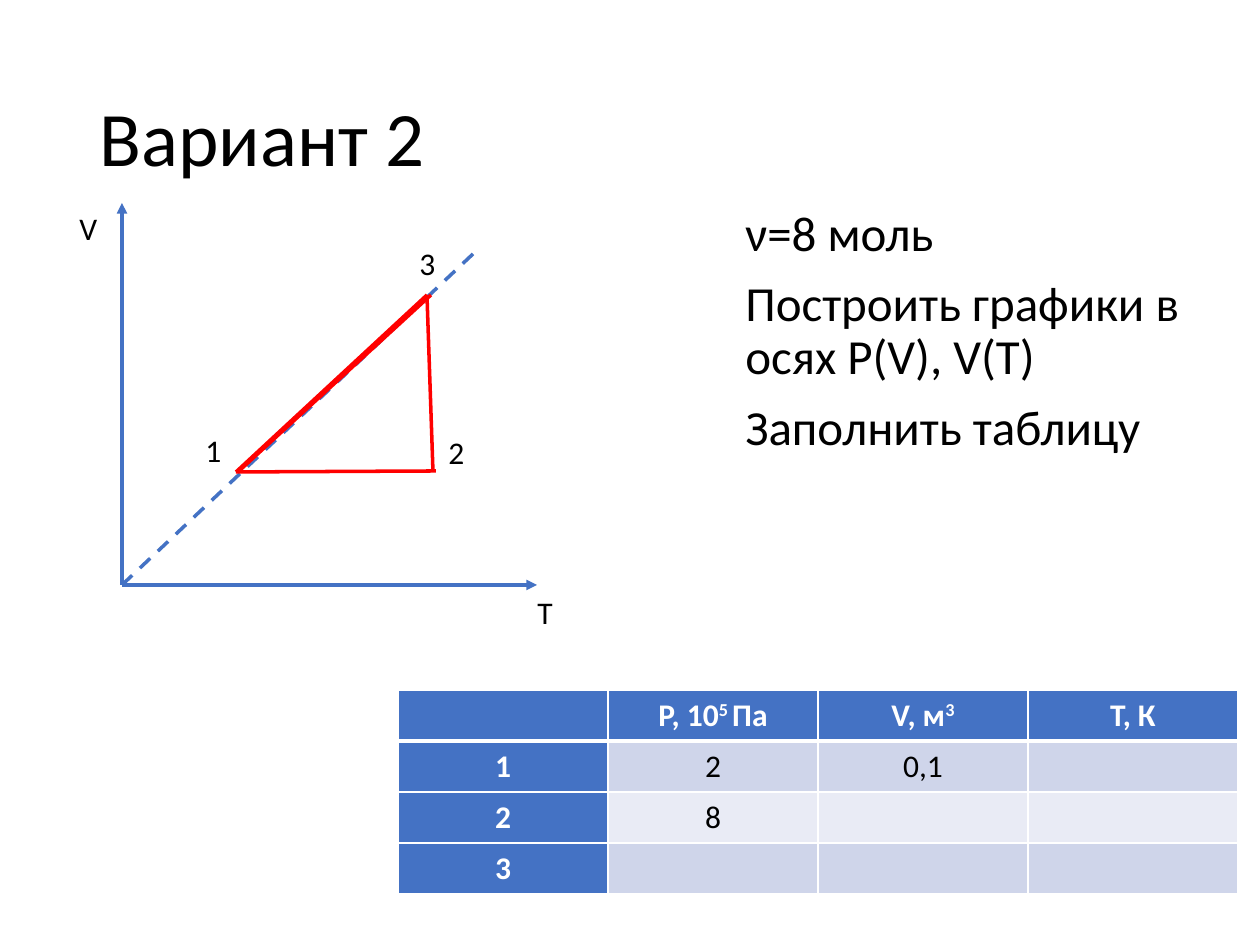
from dataclasses import dataclass

from lxml.etree import SubElement
from pptx import Presentation
from pptx.dml.color import RGBColor
from pptx.enum.dml import MSO_LINE
from pptx.enum.shapes import MSO_CONNECTOR
from pptx.enum.text import MSO_ANCHOR, MSO_AUTO_SIZE, PP_ALIGN
from pptx.oxml.ns import qn
from pptx.util import Pt

EMU_PER_PX = 914400 / 126


@dataclass(frozen=True)
class Theme:
    font: str = "Calibri"
    text: str = "000000"
    light: str = "FFFFFF"
    accent: str = "4472C4"
    process: str = "FF0000"
    bands: tuple = ("CFD5EA", "E9EBF5")
    title_size: int = 44
    body_size: int = 28
    label_size: int = 18
    line_width: int = 2


def px(length):
    return round(length * EMU_PER_PX)


def color(value):
    return RGBColor.from_string(value)


def write(paragraph, text, font, size, fill, bold=False, align=PP_ALIGN.LEFT):
    paragraph.alignment = align
    for index, part in enumerate(text.split("^")):
        run = paragraph.add_run()
        run.text = part
        run.font.name = font
        run.font.size = Pt(size)
        run.font.bold = bold
        run.font.color.rgb = color(fill)
        if index % 2:
            run.font._element.set("baseline", "30000")


class SlideBuilder:
    def __init__(self, slide, theme):
        self.slide = slide
        self.theme = theme

    def title(self, text, left, top, width, height):
        shape = self.slide.shapes.title
        shape.left, shape.top = px(left), px(top)
        shape.width, shape.height = px(width), px(height)
        frame = shape.text_frame
        frame.vertical_anchor = MSO_ANCHOR.MIDDLE
        paragraph = frame.paragraphs[0]
        paragraph.line_spacing = 0.9
        write(paragraph, text, self.theme.font, self.theme.title_size, self.theme.text)

    def body(self, lines, left, top, width, height):
        box = self.slide.shapes.add_textbox(px(left), px(top), px(width), px(height))
        frame = box.text_frame
        frame.word_wrap = True
        for index, line in enumerate(lines):
            paragraph = frame.add_paragraph() if index else frame.paragraphs[0]
            paragraph.line_spacing = 0.9
            paragraph.space_before = Pt(10)
            write(paragraph, line, self.theme.font, self.theme.body_size, self.theme.text)

    def label(self, text, left, top, width=42, height=50):
        box = self.slide.shapes.add_textbox(px(left), px(top), px(width), px(height))
        frame = box.text_frame
        frame.word_wrap = False
        frame.auto_size = MSO_AUTO_SIZE.SHAPE_TO_FIT_TEXT
        write(frame.paragraphs[0], text, self.theme.font, self.theme.label_size, self.theme.text)

    def line(self, start, end, stroke, dashed=False, arrow=False):
        connector = self.slide.shapes.add_connector(
            MSO_CONNECTOR.STRAIGHT, *map(px, start + end))
        connector.line.color.rgb = color(stroke)
        connector.line.width = Pt(self.theme.line_width)
        if dashed:
            connector.line.dash_style = MSO_LINE.DASH
        properties = connector._element.spPr
        if arrow:
            SubElement(properties.find(qn("a:ln")), qn("a:tailEnd"), type="triangle")
        SubElement(properties, qn("a:effectLst"))

    def borders(self, cell, header_edge):
        properties = cell._tc.get_or_add_tcPr()
        for side in ("L", "R", "T", "B"):
            width = Pt(3 if side == header_edge else 1)
            border = SubElement(properties, qn(f"a:ln{side}"), w=str(width))
            fill = SubElement(border, qn("a:solidFill"))
            SubElement(fill, qn("a:srgbClr"), val=self.theme.light)

    def table(self, rows, left, top, column_width, row_height):
        columns = len(rows[0])
        table = self.slide.shapes.add_table(
            len(rows), columns, px(left), px(top),
            px(columns * column_width), px(len(rows) * row_height)).table
        table.first_col = True
        for column in table.columns:
            column.width = px(column_width)
        for row_index, values in enumerate(rows):
            table.rows[row_index].height = px(row_height)
            for column_index, value in enumerate(values):
                cell = table.cell(row_index, column_index)
                heading = row_index == 0 or column_index == 0
                self.borders(cell, {0: "B", 1: "T"}.get(row_index))
                cell.fill.solid()
                band = self.theme.bands[(row_index - 1) % 2]
                cell.fill.fore_color.rgb = color(self.theme.accent if heading else band)
                if value:
                    write(cell.text_frame.paragraphs[0], value, self.theme.font,
                          self.theme.label_size,
                          self.theme.light if heading else self.theme.text,
                          bold=heading, align=PP_ALIGN.CENTER)


def main():
    presentation = Presentation()
    presentation.slide_width, presentation.slide_height = px(1260), px(945)
    slide = presentation.slides.add_slide(presentation.slide_layouts[5])
    theme = Theme()
    builder = SlideBuilder(slide, theme)

    builder.title("Вариант 2", 87, 50, 1086, 183)
    builder.body(["ν=8 моль", "Построить графики в осях P(V), V(T)", "Заполнить таблицу"],
                 733, 203, 460, 363)
    builder.table([
        ["", "P, 10^5 ^Па", "V, м^3", "T, К"],
        ["1", "2", "0,1", ""],
        ["2", "8", "", ""],
        ["3", "", "", ""],
    ], 398, 690, 210, 51)

    origin = (122, 585)
    for axis_end in ((122, 203), (537, 585)):
        builder.line(origin, axis_end, theme.accent, arrow=True)
    builder.line(origin, (474, 253), theme.accent, dashed=True)

    point_1, point_2, point_3 = (236, 472), (433, 471), (427, 295)
    for start, end in (
        ((238, 472), (431, 295)),
        (point_1, point_3),
        (point_2, point_3),
        (point_1, (436, 471)),
    ):
        builder.line(start, end, theme.process)

    for text, left, top in (
        ("V", 67, 203), ("T", 525, 587),
        ("1", 193, 425), ("2", 436, 427), ("3", 407, 238),
    ):
        builder.label(text, left, top)

    presentation.save("out.pptx")


if __name__ == "__main__":
    main()
